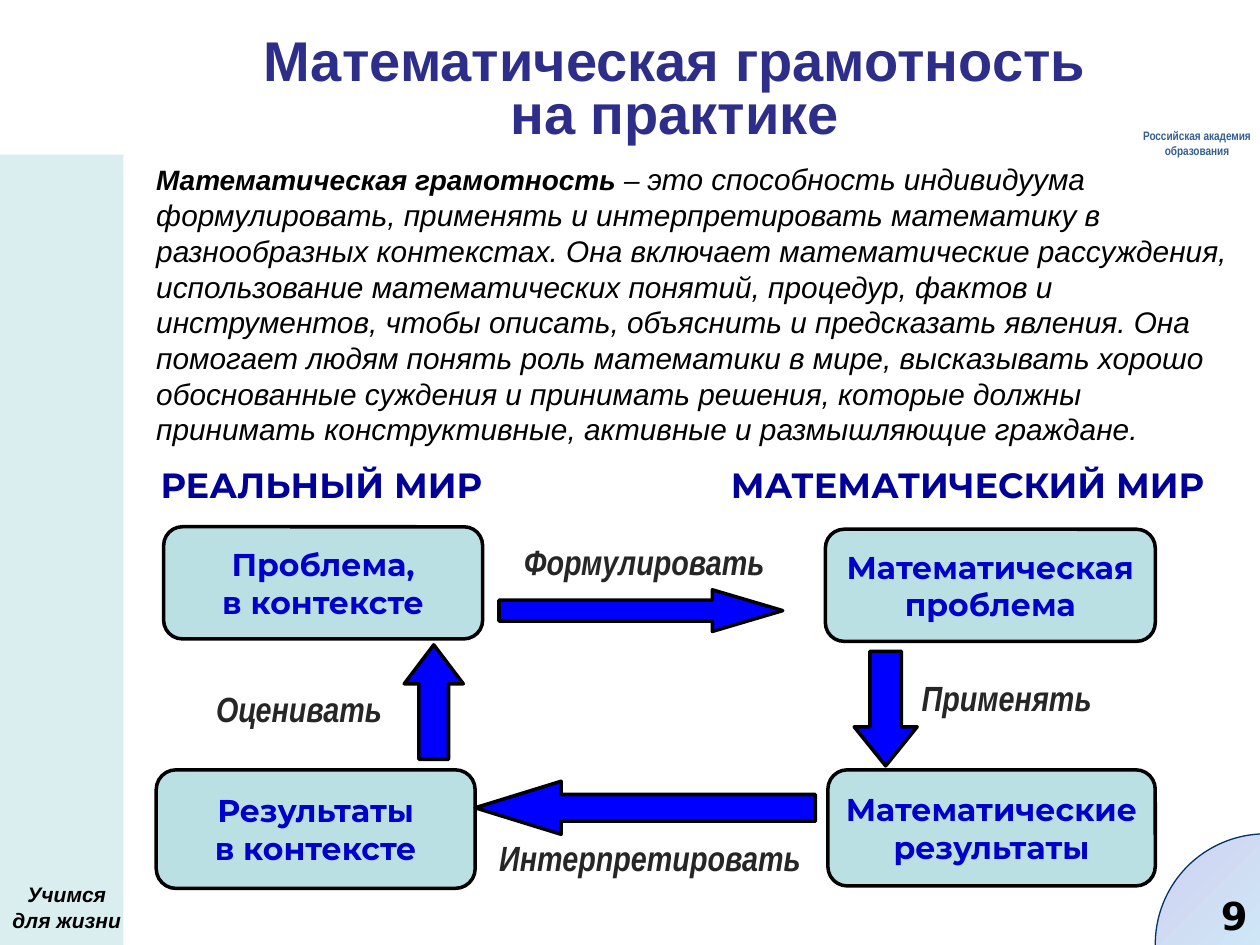
from lxml.etree import SubElement
from pptx import Presentation
from pptx.dml.color import RGBColor as Rgb
from pptx.enum.shapes import MSO_SHAPE as Kind
from pptx.enum.text import MSO_ANCHOR as Anchor, PP_ALIGN as Align
from pptx.oxml.ns import qn
from pptx.util import Cm, Pt

COLORS = {
    "pale": "BBE0E3", "black": "000000", "title": "2D2D8A", "card": "0000CC",
    "arrow": "0000FF", "verb": "262626", "head": "000099", "org": "365F91",
    "rim": "003366", "lilac": "D1D1F0", "cyan": "CCFFFF",
}


def color(name):
    return Rgb.from_string(COLORS[name])


def write(shape, *lines, size=18, font="Arial", ink="black", bold=True,
          italic=False, align=Align.CENTER, anchor=Anchor.TOP, wrap=True,
          space=None, pads=(0.25, 0.13, 0.25, 0.13)):
    """Fill a shape with lines; a line is a string or a list of (text, size, bold)."""
    frame = shape.text_frame
    frame.word_wrap = wrap
    frame.vertical_anchor = anchor
    (frame.margin_left, frame.margin_top,
     frame.margin_right, frame.margin_bottom) = map(Cm, pads)
    for i, line in enumerate(lines):
        para = frame.add_paragraph() if i else frame.paragraphs[0]
        para.alignment = align
        para.line_spacing = space
        parts = [(line, size, bold)] if isinstance(line, str) else line
        for text, points, heavy in parts:
            run = para.add_run()
            run.text = text
            run.font.name = font
            run.font.size = Pt(points)
            run.font.bold = heavy
            run.font.italic = italic
            run.font.color.rgb = color(ink)


def label(slide, box, *lines, **style):
    write(slide.shapes.add_textbox(*map(Cm, box)), *lines, **style)


def draw(slide, kind, box, fill, line=None, width=2):
    shape = slide.shapes.add_shape(kind, *map(Cm, box))
    shape.shadow.inherit = False
    shape.fill.solid()
    shape.fill.fore_color.rgb = color(fill)
    if line:
        shape.line.color.rgb = color(line)
        shape.line.width = Pt(width)
    else:
        shape.line.fill.background()
    return shape


def sidebar(slide, x, y, w, h):
    band = draw(slide, Kind.RECTANGLE, (x, y, w, h), "pale")
    tint = band.fill._xPr.find(qn("a:solidFill"))[0]
    SubElement(tint, qn("a:alpha"), val="54000")
    label(slide, (x, y + h - 1.4, w + 0.2, 1.3), "Учимся для жизни",
          size=12, italic=True, pads=(0.2, 0.13, 0.2, 0.13))


def corner(slide, x, y, size):
    """Page number on a disc that runs over the slide's corner."""
    disc = draw(slide, Kind.OVAL, (x, y, size, size), "lilac", "rim", 0.75)
    disc.fill.gradient()
    disc.fill.gradient_angle = 315
    for stop, name in zip(disc.fill.gradient_stops, ("lilac", "cyan")):
        stop.color.rgb = color(name)
    label(slide, (x + 0.05, y + 1.05, 2.06, 1.19), "9", size=22,
          font="DejaVu Sans", align=Align.RIGHT, wrap=False)


def header(slide, x, y, w, h):
    label(slide, (x, y, w, h), "Математическая грамотность", "на практике",
          size=32, ink="title", anchor=Anchor.MIDDLE, space=0.8)
    label(slide, (x + w - 2.24, y + 2.13, 2.44, 0.66),
          "Российская академия образования", size=7, font="Arial Narrow",
          ink="org", pads=(0.15, 0.13, 0.05, 0.13))


def definition(slide, *box):
    label(slide, box, [
        ("Математическая грамотность", 16, True),
        (" – ", 16, False),
        ("это способность индивидуума формулировать, применять и "
         "интерпретировать математику в разнообразных контекстах. Она "
         "включает математические рассуждения, использование математических "
         "понятий, процедур, фактов и инструментов, чтобы описать, объяснить "
         "и предсказать явления. Она помогает людям понять роль математики в "
         "мире, высказывать хорошо обоснованные суждения и принимать решения, "
         "которые должны принимать конструктивные, активные и размышляющие "
         "граждане.", 17, False),
    ], italic=True, align=Align.LEFT)


def cycle(slide, x, y):
    """Four cards joined by four block arrows, under two headings."""
    heads = [
        (0, 8.08, "РЕАЛЬНЫЙ МИР"),
        (11.86, 10.41, "МАТЕМАТИЧЕСКИЙ МИР"),
    ]
    cards = [
        (0.86, 1.4, 6.43, 2.26, "Проблема,", "в контексте"),
        (0.71, 6.3, 6.43, 2.39, "Результаты", "в контексте"),
        (14.2, 1.45, 6.65, 2.26, "Математическая", "проблема"),
        (14.25, 6.3, 6.6, 2.34, "Математические", "результаты"),
    ]
    arrows = [
        (Kind.RIGHT_ARROW, 7.62, 2.67, 5.72, 0.84, 1.69),
        (Kind.DOWN_ARROW, 14.78, 3.91, 1.27, 2.31, 0.62),
        (Kind.LEFT_ARROW, 7.14, 6.53, 6.86, 1.07, 1.62),
        (Kind.UP_ARROW, 5.71, 3.78, 1.19, 2.31, 0.66),
    ]
    verbs = [
        (0.86, 4.5, 5.46, "Оценивать"),
        (7.06, 7.52, 7.21, "Интерпретировать"),
        (15.06, 4.29, 5.59, "Применять"),
        (6.65, 1.55, 7.8, "Формулировать"),
    ]
    for left, top, w, h, *lines in cards:
        card = draw(slide, Kind.ROUNDED_RECTANGLE, (x + left, y + top, w, h),
                    "pale", "black")
        write(card, *lines, font="Montserrat", ink="card",
              anchor=Anchor.MIDDLE, wrap=False)
    for kind, left, top, w, h, tip in arrows:
        arrow = draw(slide, kind, (x + left, y + top, w, h), "arrow", "black")
        arrow.adjustments[0] = 0.5
        arrow.adjustments[1] = tip
    for left, top, w, verb in verbs:
        label(slide, (x + left, y + top, w, 1.12), verb, size=20,
              font="Arial Narrow", ink="verb", italic=True)
    for left, w, head in heads:
        label(slide, (x + left, y, w, 1.12), head, size=20,
              font="Montserrat", ink="head")


def main():
    deck = Presentation()
    deck.slide_width, deck.slide_height = Cm(25.4), Cm(19.05)
    slide = deck.slides.add_slide(deck.slide_layouts[6])
    sidebar(slide, 0, 3.12, 2.49, 15.93)
    corner(slide, 23.29, 16.81, 4.45)
    header(slide, 2.11, 0.33, 22.99, 3.05)
    cycle(slide, 2.44, 9.22)
    definition(slide, 2.9, 3.12, 22.5, 5.79)
    deck.save("out.pptx")


if __name__ == "__main__":
    main()
